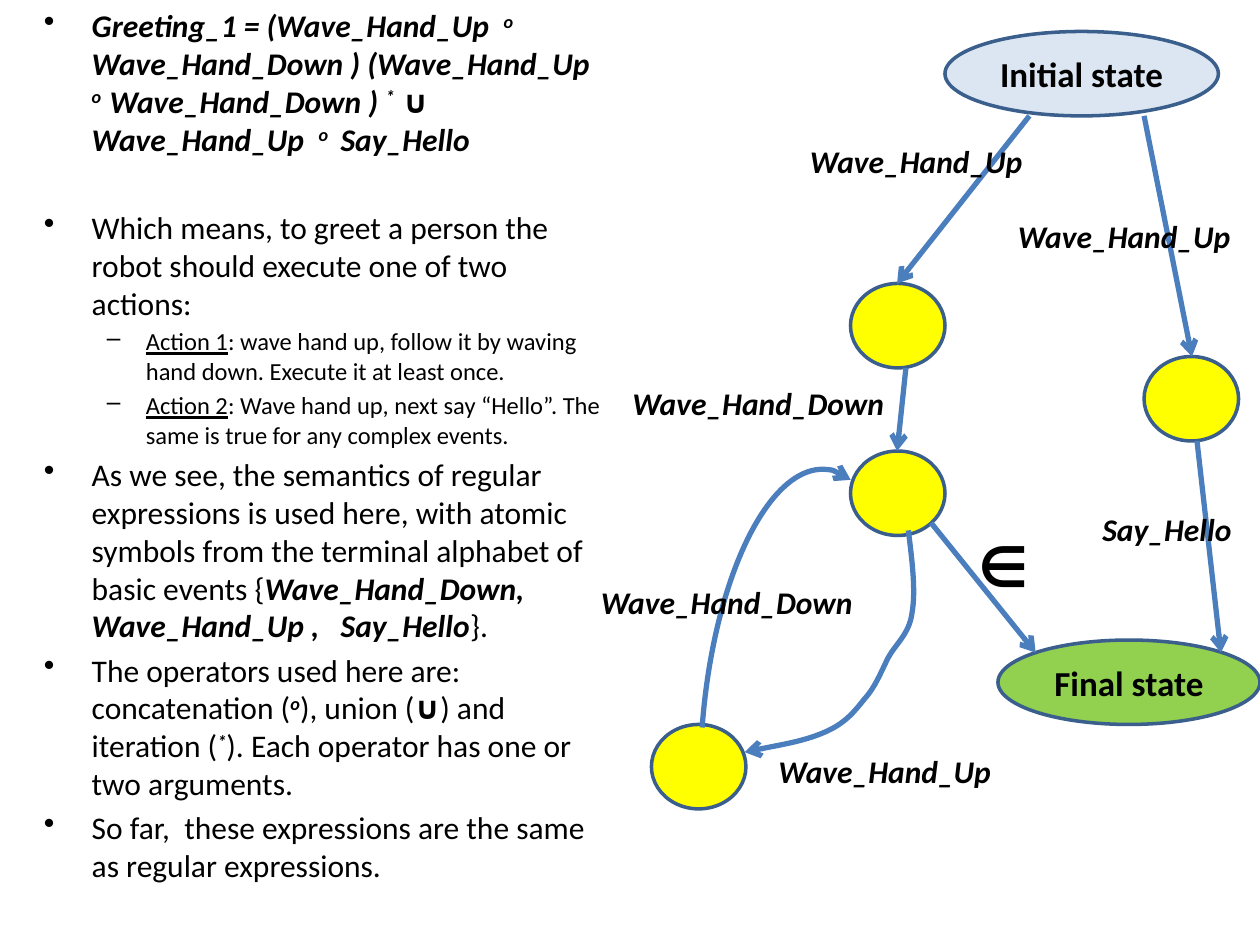
"""Build a slide on a greeting event expression with its state diagram."""
from lxml.etree import SubElement
from pptx import Presentation
from pptx.dml.color import RGBColor
from pptx.enum.shapes import MSO_CONNECTOR as Link, MSO_SHAPE as Kind
from pptx.enum.text import MSO_ANCHOR as Anchor, PP_ALIGN as Align
from pptx.oxml.ns import qn
from pptx.util import Inches, Pt

BLACK = RGBColor(0, 0, 0)
PALE = RGBColor(0xDC, 0xE6, 0xF2)
YELLOW = RGBColor(0xFF, 0xFF, 0)
GREEN = RGBColor(0x92, 0xD0, 0x50)
EDGE = RGBColor(0x3A, 0x5F, 0x8C)
BLUE = RGBColor(0x4B, 0x7E, 0xBC)
FACE = "Calibri"

UP, DOWN, HELLO = "Wave_Hand_Up", "Wave_Hand_Down", "Say_Hello"

# Each note: level, space before, runs of (text, style); b bold italic, s raised, u underlined
NOTES = [
    (0, 3.6, [("Greeting_1 = (Wave_Hand_Up  ", "b"), ("o  ", "bs"),
              ("Wave_Hand_Down ) (Wave_Hand_Up  ", "b"), ("o  ", "bs"),
              ("Wave_Hand_Down ) ", "b"), ("*  ", "bs"),
              ("∪ Wave_Hand_Up  ", "b"), ("o   ", "bs"), (HELLO, "b")]),
    (0, 29, [("Which means, to greet a person the robot should execute "
              "one of two actions:", "")]),
    (1, 2.8, [("Action 1", "u"),
              (": wave hand up, follow it by waving hand down. "
               "Execute it at least once.", "")]),
    (1, 2.8, [("Action 2", "u"),
              (": Wave hand up, next say “Hello”. The same is true "
               "for any complex events.", "")]),
    (0, 3.6, [("As we see, the semantics of regular expressions is used here, "
               "with atomic symbols from the terminal alphabet of basic events {", ""),
              ("Wave_Hand_Down,  Wave_Hand_Up ,   Say_Hello", "b"), ("}.", "")]),
    (0, 3.6, [("The operators used here are: concatenation (", ""), ("o", "bs"),
              ("), union (", ""), ("∪", "b"), (") and iteration (", ""), ("*", "bs"),
              ("). Each operator has one or two arguments.", "")]),
    (0, 3.6, [("So far,  these expressions are the same as regular expressions.", "")]),
]
LEVELS = [("•", 18, 0.38, 0.38), ("–", 14, 0.81, 0.31)]

STATES = [
    (7.5, 0.25, 2.17, PALE, "Initial state"),
    (7.92, 5.08, 2.08, GREEN, "Final state"),
    (6.75, 2.25, 0.75, YELLOW, ""),
    (9.08, 2.83, 0.75, YELLOW, ""),
    (6.75, 3.58, 0.75, YELLOW, ""),
    (5.17, 5.75, 0.75, YELLOW, ""),
]
ARROWS = [
    (9.08, 0.92, 9.46, 2.83), (9.5, 3.5, 9.69, 5.18), (8.17, 0.92, 7.12, 2.25),
    (7.19, 2.92, 7.12, 3.58), (7.39, 4.15, 8.22, 5.18),
]
LABELS = [
    (7.98, 1.67, 2.02, UP), (6.33, 1.08, 2.02, UP), (6.08, 5.92, 2.02, UP),
    (4.92, 3, 2.28, DOWN), (4.67, 4.58, 2.28, DOWN), (8.65, 4, 1.35, HELLO),
]
CURVE = [
    (7.21, 4.21), (7.24, 4.45), (7.27, 4.69), (7.24, 4.86),
    (7.22, 5.03), (7.11, 5.11), (7.05, 5.22), (6.99, 5.34),
    (6.95, 5.45), (6.86, 5.55), (6.78, 5.65), (6.71, 5.74),
    (6.55, 5.81), (6.39, 5.88), (6.15, 5.92), (5.91, 5.97),
]


def style(para, size, bold=None, slant=None):
    font = para.font
    font.name, font.size, font.bold, font.italic = FACE, Pt(size), bold, slant
    font.color.rgb = BLACK


def label(slide, box, text, size, slant=None, wrap=False):
    frame = slide.shapes.add_textbox(*map(Inches, box)).text_frame
    frame.word_wrap = wrap
    para = frame.paragraphs[0]
    para.text = text
    style(para, size, True, slant)


def pen(shape, end="tailEnd"):
    shape.line.color.rgb, shape.line.width = BLUE, Pt(3)
    SubElement(shape.line._get_or_add_ln(), qn("a:" + end), type="arrow")


def write(slide):
    frame = slide.shapes.add_textbox(
        *map(Inches, (0.25, 0, 4.67, 6.83))).text_frame
    frame.word_wrap = True
    for pos, (level, gap, runs) in enumerate(NOTES):
        para = frame.add_paragraph() if pos else frame.paragraphs[0]
        mark, size, left, hang = LEVELS[level]
        para.level, para.space_before = level, Pt(gap)
        props = para._p.get_or_add_pPr()
        props.set("marL", str(Inches(left)))
        props.set("indent", str(-Inches(hang)))
        SubElement(props, qn("a:buChar"), char=mark)
        style(para, size)
        for text, flags in runs:
            run = para.add_run()
            run.text = text
            if "b" in flags:
                run.font.bold = run.font.italic = True
            if "u" in flags:
                run.font.underline = True
            if "s" in flags:
                run._r.get_or_add_rPr().set("baseline", "30000")


def state(slide, left, top, width, fill, text):
    oval = slide.shapes.add_shape(
        Kind.OVAL, *map(Inches, (left, top, width, 0.67)))
    oval.shadow.inherit = False
    oval.fill.solid()
    oval.fill.fore_color.rgb = fill
    oval.line.color.rgb, oval.line.width = EDGE, Pt(2)
    if text:
        oval.text_frame.vertical_anchor = Anchor.MIDDLE
        para = oval.text_frame.paragraphs[0]
        para.text, para.alignment = text, Align.CENTER
        style(para, 20, True)


def arrow(slide, ends):
    line = slide.shapes.add_connector(Link.STRAIGHT, *map(Inches, ends))
    pen(line)
    SubElement(line._element.spPr, qn("a:effectLst"))


def loop(slide):
    arc = slide.shapes.add_shape(
        Kind.ARC, *map(Inches, (5.57, 3.72, 1.65, 4.23)))
    arc.adjustments[0], arc.adjustments[1] = 158.53, 0
    arc.rotation = 4.2
    arc._element.spPr.find(qn("a:xfrm")).set("flipH", "1")

    form = slide.shapes.build_freeform(
        *map(Inches, CURVE[0]), scale=1.0)
    form.add_line_segments(
        [tuple(map(Inches, spot)) for spot in CURVE[1:]], close=False)
    bend = form.convert_to_shape()
    trail = next(bend._element.iter(qn("a:path")))
    steps = trail.findall(qn("a:lnTo"))
    for start in range(0, len(steps), 3):
        cubic = SubElement(trail, qn("a:cubicBezTo"))
        for step in steps[start:start + 3]:
            cubic.append(step[0])
            trail.remove(step)

    for shape, end in ((arc, "headEnd"), (bend, "tailEnd")):
        shape.shadow.inherit = False
        shape.fill.background()
        pen(shape, end)


def main():
    deck = Presentation()
    deck.slide_width, deck.slide_height = Inches(10), Inches(7.5)
    slide = deck.slides.add_slide(deck.slide_layouts[6])
    write(slide)
    for item in STATES:
        state(slide, *item)
    for ends in ARROWS:
        arrow(slide, ends)
    loop(slide)
    for left, top, width, text in LABELS:
        label(slide, (left, top, width, 0.4), text, 18, True)
    label(slide, (7.67, 4.17, 0.5, 0.64), "∈", 32, wrap=True)
    deck.save("out.pptx")


if __name__ == "__main__":
    main()
